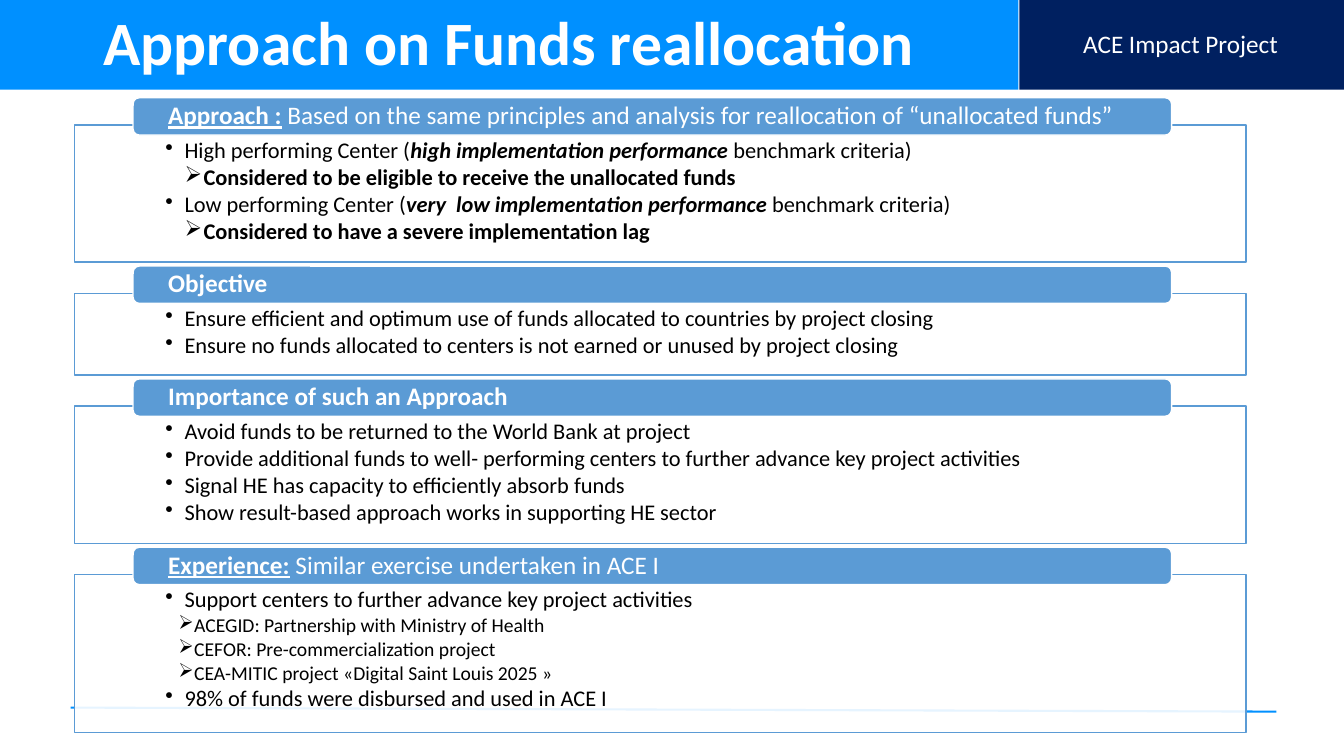
from lxml.etree import SubElement
from pptx import Presentation
from pptx.dml.color import RGBColor
from pptx.enum.shapes import MSO_CONNECTOR, MSO_SHAPE
from pptx.enum.text import MSO_ANCHOR, MSO_AUTO_SIZE, PP_ALIGN
from pptx.oxml.ns import qn
from pptx.util import Inches, Pt

FONT = "Calibri"
BRIGHT_BLUE = RGBColor(0x00, 0x90, 0xFF)
NAVY = RGBColor(0x00, 0x20, 0x60)
STEEL_BLUE = RGBColor(0x5B, 0x9B, 0xD5)
WHITE = RGBColor(0xFF, 0xFF, 0xFF)
BLACK = RGBColor(0, 0, 0)

TITLE = "Approach on Funds reallocation"
PROJECT = "ACE Impact Project"

# Item styles: bullet, level, left margin, hanging indent, size
POINT = ("•", 1, 0.19, 0.19, 16)
CONCLUSION = ("➢", 2, 0.38, 0.19, 16)
EXAMPLE = ("➢", 2, 0.25, 0.12, 14)

# Each section: panel height, heading runs, items; a run is (text, b/i/u flags)
SECTIONS = [
    (1.36,
     [("Approach :", "bu"),
      (" Based on the same principles and analysis for reallocation of “unallocated funds”", "")],
     [(POINT, [("High performing Center (", ""),
               ("high implementation performance ", "bi"),
               ("benchmark criteria)", "")]),
      (CONCLUSION, [("Considered to be eligible to receive the unallocated funds", "b")]),
      (POINT, [("Low performing Center (", ""),
               ("very  low implementation performance ", "bi"),
               ("benchmark criteria)", "")]),
      (CONCLUSION, [("Considered to have a severe implementation lag", "b")])]),
    (0.81,
     [("Objective", "b")],
     [(POINT, [("Ensure efficient and optimum use of funds allocated to countries by project closing", "")]),
      (POINT, [("Ensure no funds allocated to centers is not earned or unused by project closing", "")])]),
    (1.36,
     [("Importance of such an Approach", "b")],
     [(POINT, [("Avoid funds to be returned to the World Bank at project", "")]),
      (POINT, [("Provide additional funds to well- performing centers to further advance key project activities", "")]),
      (POINT, [("Signal HE has capacity to efficiently absorb funds", "")]),
      (POINT, [("Show result-based approach works in supporting HE sector", "")])]),
    (1.57,
     [("Experience:", "bu"), (" ", "b"), ("Similar exercise undertaken in ACE I", "")],
     [(POINT, [("Support centers to further advance key project activities", "")]),
      (EXAMPLE, [("ACEGID: Partnership with Ministry of Health", "")]),
      (EXAMPLE, [("CEFOR: Pre-commercialization project", "")]),
      (EXAMPLE, [("CEA-MITIC project «Digital Saint Louis 2025 »", "")]),
      (POINT, [("98% of funds were disbursed and used in ACE I", "")])]),
]

FIRST_PANEL_TOP = 1.24
PANEL_GAP = 0.31
PANEL_LEFT, PANEL_WIDTH = 0.74, 11.62
HEADING_LEFT, HEADING_WIDTH, HEADING_HEIGHT = 1.32, 10.3, 0.37
HEADING_RISE = 0.27


def add_block(slide, kind, box, fill, line=None):
    block = slide.shapes.add_shape(kind, *map(Inches, box))
    block.shadow.inherit = False
    block.fill.solid()
    block.fill.fore_color.rgb = fill
    if line is None:
        block.line.fill.background()
    else:
        block.line.color.rgb = line
        block.line.width = Pt(1)
    return block


def set_insets(frame, side, top, bottom):
    frame.word_wrap = True
    frame.margin_left = frame.margin_right = Inches(side)
    frame.margin_top, frame.margin_bottom = Inches(top), Inches(bottom)


def write_runs(paragraph, runs, size, color):
    for text, flags in runs:
        run = paragraph.add_run()
        run.text = text
        font = run.font
        font.name, font.size = FONT, Pt(size)
        font.color.rgb = color
        font.bold, font.italic = "b" in flags, "i" in flags
        font.underline = "u" in flags


def add_panel(slide, top, height, items):
    panel = add_block(slide, MSO_SHAPE.RECTANGLE,
                      (PANEL_LEFT, top, PANEL_WIDTH, height), WHITE, STEEL_BLUE)
    fill_color = panel.fill._xPr.find(qn("a:solidFill"))[0]
    SubElement(fill_color, qn("a:alpha")).set("val", "90000")
    frame = panel.text_frame
    frame.vertical_anchor = MSO_ANCHOR.TOP
    set_insets(frame, 0.9, 0.14, 0.12)
    for index, ((bullet, level, margin, hanging, size), runs) in enumerate(items):
        item = frame.add_paragraph() if index else frame.paragraphs[0]
        properties = item._p.get_or_add_pPr()
        properties.set("marL", str(Inches(margin)))
        properties.set("indent", str(-Inches(hanging)))
        SubElement(properties, qn("a:buChar")).set("char", bullet)
        item.level = level
        item.alignment = PP_ALIGN.LEFT
        item.line_spacing = 0.9
        item.space_after = Pt(2)
        write_runs(item, runs, size, BLACK)


def add_heading(slide, top, runs):
    heading = add_block(slide, MSO_SHAPE.ROUNDED_RECTANGLE,
                        (HEADING_LEFT, top, HEADING_WIDTH, HEADING_HEIGHT),
                        STEEL_BLUE, WHITE)
    frame = heading.text_frame
    frame.vertical_anchor = MSO_ANCHOR.MIDDLE
    set_insets(frame, 0.33, 0, 0)
    line = frame.paragraphs[0]
    line.alignment = PP_ALIGN.LEFT
    line.line_spacing = 0.9
    write_runs(line, runs, 18, WHITE)


def add_banner(slide):
    footer = slide.shapes.add_connector(
        MSO_CONNECTOR.STRAIGHT, *map(Inches, (0.7, 7.02, 12.66, 7.06)))
    footer.line.color.rgb = BRIGHT_BLUE
    footer.line.width = Pt(1.5)
    SubElement(footer._element.spPr, qn("a:effectLst"))

    add_block(slide, MSO_SHAPE.RECTANGLE, (0, 0, 10.1, 0.89), BRIGHT_BLUE)
    add_block(slide, MSO_SHAPE.RECTANGLE, (10.11, 0, 3.23, 0.89), NAVY)
    project = slide.shapes.add_textbox(*map(Inches, (10.48, 0.23, 2.46, 0.4)))
    project.text_frame.word_wrap = True
    label = project.text_frame.paragraphs[0]
    label.alignment = PP_ALIGN.CENTER
    write_runs(label, [(PROJECT, "")], 18, WHITE)

    title = slide.shapes.title
    title.left, title.top, title.width, title.height = map(Inches, (0, 0, 10.1, 0.9))
    frame = title.text_frame
    frame.auto_size = MSO_AUTO_SIZE.NONE
    frame.vertical_anchor = MSO_ANCHOR.MIDDLE
    headline = frame.paragraphs[0]
    headline.alignment = PP_ALIGN.CENTER
    headline.line_spacing = 0.9
    write_runs(headline, [(TITLE, "b")], 44, WHITE)
    slide.shapes._spTree.append(title._element)  # in front of the banner


def main():
    deck = Presentation()
    deck.slide_width, deck.slide_height = Inches(13.33), Inches(7.5)
    slide = deck.slides.add_slide(deck.slide_layouts[5])
    add_banner(slide)
    top = FIRST_PANEL_TOP
    for height, heading, items in SECTIONS:
        add_panel(slide, top, height, items)
        add_heading(slide, top - HEADING_RISE, heading)
        top += height + PANEL_GAP
    deck.save("out.pptx")


if __name__ == "__main__":
    main()
